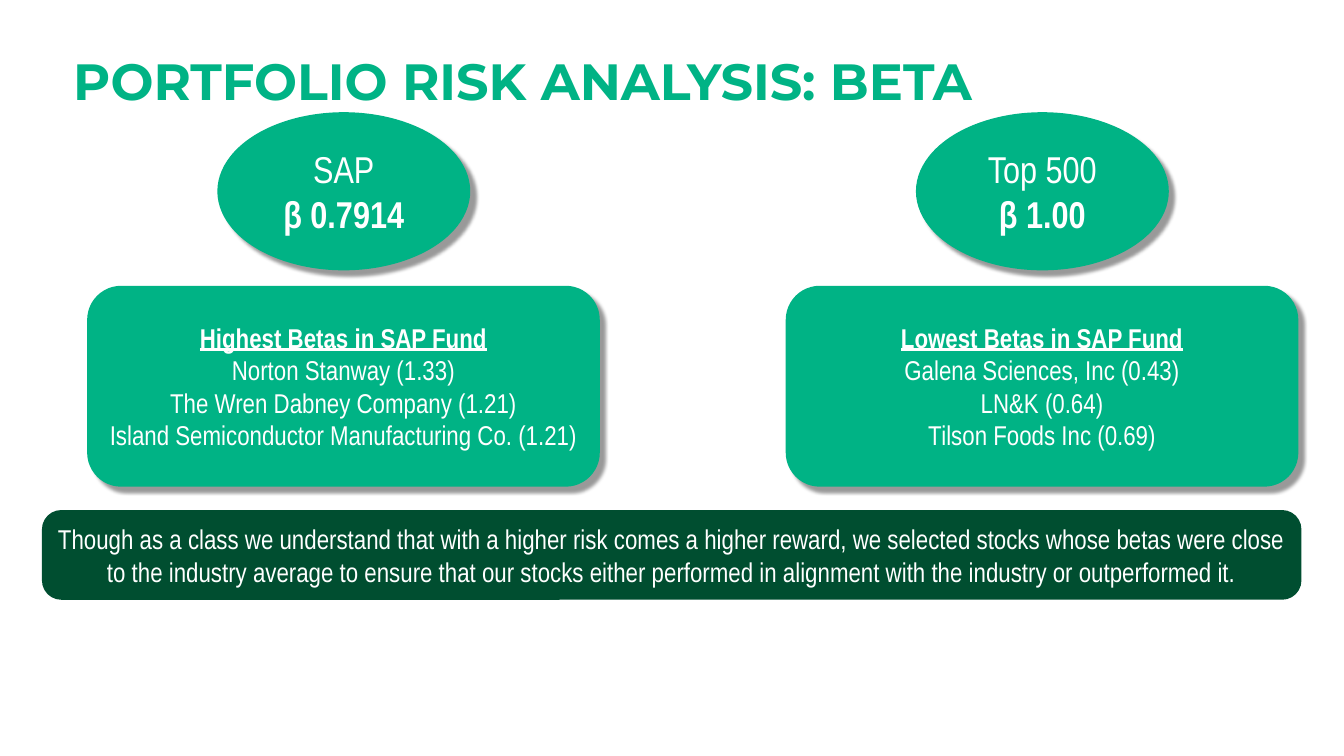
from lxml import etree
from pptx import Presentation
from pptx.dml.color import RGBColor
from pptx.enum.shapes import MSO_SHAPE
from pptx.enum.text import MSO_ANCHOR, PP_ALIGN
from pptx.oxml.ns import qn
from pptx.util import Inches, Pt

GREEN = RGBColor(0x00, 0xB3, 0x85)
DARK_GREEN = RGBColor(0x00, 0x4E, 0x30)
WHITE = RGBColor(0xFF, 0xFF, 0xFF)
BLACK = RGBColor(0x00, 0x00, 0x00)
ELLIPSE = MSO_SHAPE.OVAL
ROUNDED = MSO_SHAPE.ROUNDED_RECTANGLE
CENTER = PP_ALIGN.CENTER
MIDDLE = MSO_ANCHOR.MIDDLE
BOTTOM = MSO_ANCHOR.BOTTOM


class BetaSlide:
    """Draws the elements of the beta analysis in one shared style."""

    heading_font = "Montserrat"
    body_font = "Arial Narrow"

    def __init__(self, slide):
        self.slide = slide

    def add_text(self, paragraph, text, size, font, color, bold=False, underline=False):
        run = paragraph.add_run()
        run.text = text
        run.font.size = Pt(size)
        run.font.name = font
        run.font.color.rgb = color
        run.font.bold = bold
        run.font.underline = underline

    def title(self, text, left, top, width, height):
        box = self.slide.shapes.add_textbox(
            Inches(left), Inches(top), Inches(width), Inches(height))
        frame = box.text_frame
        frame.word_wrap = True
        frame.vertical_anchor = BOTTOM
        heading = frame.paragraphs[0]
        heading.line_spacing = 0.8
        self.add_text(heading, text, 60, self.heading_font, GREEN, bold=True)

    def panel(self, kind, left, top, width, height, lines, size=32, fill=GREEN):
        panel = self.slide.shapes.add_shape(
            kind, Inches(left), Inches(top), Inches(width), Inches(height))
        panel.shadow.inherit = False
        panel.fill.solid()
        panel.fill.fore_color.rgb = fill
        panel.line.color.rgb = fill
        panel.line.width = Pt(2)
        frame = panel.text_frame
        frame.word_wrap = True
        frame.vertical_anchor = MIDDLE
        for index, (text, bold, underline) in enumerate(lines):
            paragraph = frame.add_paragraph() if index else frame.paragraphs[0]
            paragraph.alignment = CENTER
            self.add_text(paragraph, text, size, self.body_font, WHITE, bold, underline)
        return panel

    def cast_shadow(self, panel):
        effects = panel.element.spPr.find(qn("a:effectLst"))
        shadow = etree.SubElement(
            effects, qn("a:outerShdw"), blurRad=str(Pt(4)), dist=str(Pt(9)),
            dir=str(45 * 60000), algn="tl", rotWithShape="0")
        color = etree.SubElement(shadow, qn("a:srgbClr"), val=str(BLACK))
        etree.SubElement(color, qn("a:alpha"), val="40000")

    def beta_column(self, left, portfolio, beta, heading, holdings):
        holding_lines = [(heading, True, True)]
        holding_lines += [(holding, False, False) for holding in holdings]
        self.cast_shadow(self.panel(ROUNDED, left, 4.69, 8.36, 3.26, holding_lines))
        beta_lines = [(portfolio, False, False), (beta, True, False)]
        self.cast_shadow(
            self.panel(ELLIPSE, left + 2.13, 1.85, 4.11, 2.56, beta_lines, size=44))

    def conclusion(self, text):
        banner = self.panel(
            ROUNDED, 0.7, 8.36, 20.58, 1.44, [(text, False, False)], fill=DARK_GREEN)
        banner.adjustments[0] = 0.21


def main():
    deck = Presentation()
    deck.slide_width = Inches(21.99)
    deck.slide_height = Inches(12.37)
    beta_slide = BetaSlide(deck.slides.add_slide(deck.slide_layouts[6]))

    beta_slide.title("PORTFOLIO RISK ANALYSIS: BETA", 1.1, 0.67, 19.79, 1.18)
    beta_slide.beta_column(
        1.44, "SAP", "β 0.7914", "Highest Betas in SAP Fund",
        ["Norton Stanway (1.33)",
         "The Wren Dabney Company (1.21)",
         "Island Semiconductor Manufacturing Co. (1.21)"])
    beta_slide.beta_column(
        12.87, "Top 500", "β 1.00", "Lowest Betas in SAP Fund",
        ["Galena Sciences, Inc (0.43)",
         "LN&K (0.64)",
         "Tilson Foods Inc (0.69)"])
    beta_slide.conclusion(
        "Though as a class we understand that with a higher risk comes a higher reward, "
        "we selected stocks whose betas were close to the industry average to ensure that "
        "our stocks either performed in alignment with the industry or outperformed it.")

    deck.save("out.pptx")


if __name__ == "__main__":
    main()
